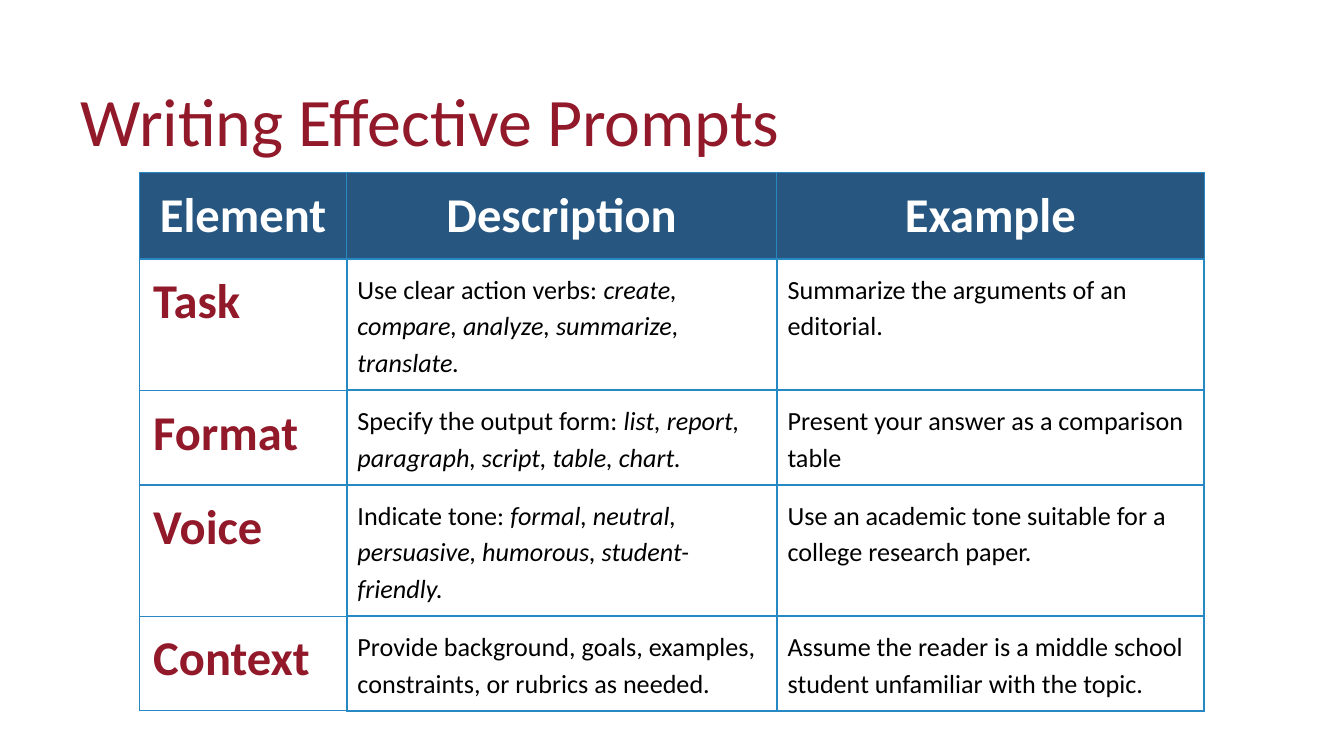
from dataclasses import dataclass

from lxml.etree import SubElement
from pptx import Presentation
from pptx.dml.color import RGBColor as Rgb
from pptx.enum.text import MSO_ANCHOR as Anchor, MSO_AUTO_SIZE as Fit, PP_ALIGN as Align
from pptx.oxml.ns import qn
from pptx.util import Pt

PX = 4572  # 200 px to the inch


@dataclass(frozen=True)
class Theme:
    font: str = "Calibri"
    red: str = "91192A"
    navy: str = "275781"
    line: str = "2789C3"
    rim: str = "2988C2"
    white: str = "FFFFFF"
    black: str = "000000"
    title: float = 36.4
    head: float = 26
    body: float = 14


T = Theme()


@dataclass(frozen=True)
class Style:
    size: float
    color: str
    bold: bool = False
    align: Align = Align.LEFT
    pad: int = 20
    space: float = 1.0
    fill: str = ""
    line: str = T.rim
    thick: float = 0.75


@dataclass(frozen=True)
class Row:
    name: str
    lead: str
    terms: str
    sample: str
    high: int


HEAD = Style(T.head, T.white, True, Align.CENTER, fill=T.navy)
NAME = Style(T.head, T.red, True)
BODY = Style(T.body, T.black, pad=16, space=1.15, line=T.line, thick=1)
TITLE = Style(T.title, T.red)

HEADS = ("Element", "Description", "Example")
WIDTHS = (308, 640, 636)
HEAD_HIGH = 128
ROWS = (
    Row("Task", "Use clear action verbs: ",
        "create, compare, analyze, summarize, translate.",
        "Summarize the arguments of an editorial.", 195),
    Row("Format", "Specify the output form: ",
        "list, report, paragraph, script, table, chart.",
        "Present your answer as a comparison table", 141),
    Row("Voice", "Indicate tone: ",
        "formal, neutral, persuasive, humorous, student-friendly.",
        "Use an academic tone suitable for a college research paper.", 195),
    Row("Context",
        "Provide background, goals, examples, constraints, or rubrics as needed.", "",
        "Assume the reader is a middle school student unfamiliar with the topic.", 141),
)


def write(frame, style: Style, text: str, slant: str = "") -> None:
    """Set one paragraph, with an optional italic tail."""
    frame.text = text
    para = frame.paragraphs[0]
    para.alignment = style.align
    para.line_spacing = style.space
    if slant:
        tail = para.add_run()
        tail.text = slant
        tail.font.italic = True
    for run in para.runs:
        font = run.font
        font.name = T.font
        font.size = Pt(style.size)
        font.bold = style.bold
        font.color.rgb = Rgb.from_string(style.color)


def edge(cell, style: Style) -> None:
    """Draw a thin line on all four sides of a cell."""
    props = cell._tc.get_or_add_tcPr()
    for tag in ("a:lnL", "a:lnR", "a:lnT", "a:lnB"):
        line = SubElement(props, qn(tag), w=str(Pt(style.thick)))
        fill = SubElement(line, qn("a:solidFill"))
        SubElement(fill, qn("a:srgbClr"), val=style.line)


def fill_cell(cell, style: Style, text: str, slant: str = "") -> None:
    edge(cell, style)
    if style.fill:
        cell.fill.solid()
        cell.fill.fore_color.rgb = Rgb.from_string(style.fill)
    else:
        cell.fill.background()
    pad = style.pad * PX
    cell.margin_left = cell.margin_right = pad
    cell.margin_top = cell.margin_bottom = pad
    write(cell.text_frame, style, text, slant)


def add_title(slide, text: str) -> None:
    title = slide.shapes.title
    title.left, title.top = 100 * PX, 97 * PX
    title.width, title.height = 1800 * PX, 125 * PX
    frame = title.text_frame
    frame.auto_size = Fit.NONE
    frame.vertical_anchor = Anchor.TOP
    frame.margin_left = frame.margin_right = 20 * PX
    frame.margin_top = frame.margin_bottom = 20 * PX
    write(frame, TITLE, text)


def add_grid(slide, left: int, top: int) -> None:
    highs = (HEAD_HIGH, *(row.high for row in ROWS))
    grid = slide.shapes.add_table(
        len(highs), len(WIDTHS), left * PX, top * PX,
        sum(WIDTHS) * PX, sum(highs) * PX).table
    grid.first_row = grid.horz_banding = False
    for col, wide in zip(grid.columns, WIDTHS):
        col.width = wide * PX
    for line, high in zip(grid.rows, highs):
        line.height = high * PX
    for c, text in enumerate(HEADS):
        fill_cell(grid.cell(0, c), HEAD, text)
    for r, row in enumerate(ROWS, 1):
        fill_cell(grid.cell(r, 0), NAME, row.name)
        fill_cell(grid.cell(r, 1), BODY, row.lead, row.terms)
        fill_cell(grid.cell(r, 2), BODY, row.sample)


def main() -> None:
    deck = Presentation()
    deck.slide_width, deck.slide_height = 2000 * PX, 1125 * PX
    slide = deck.slides.add_slide(deck.slide_layouts[5])
    add_title(slide, "Writing Effective Prompts")
    add_grid(slide, 208, 257)
    deck.save("out.pptx")


if __name__ == "__main__":
    main()
